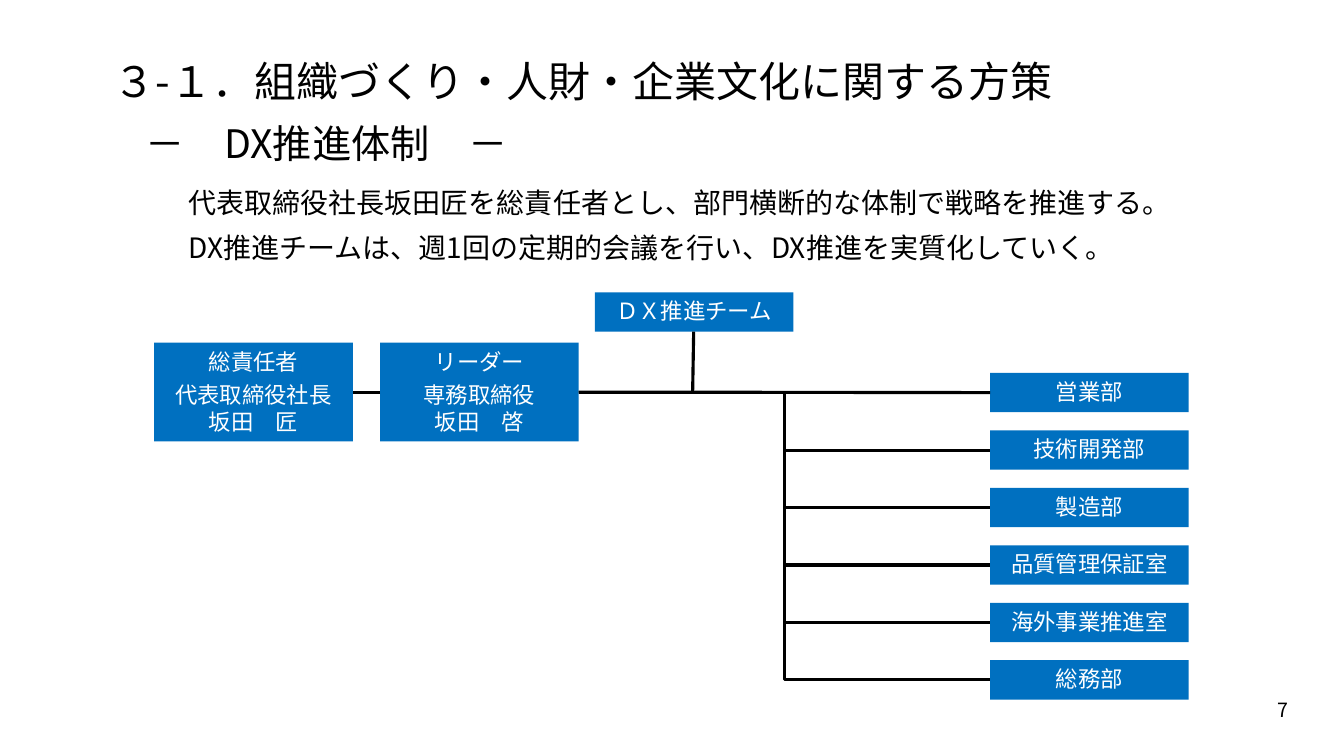
from dataclasses import dataclass

from lxml.etree import SubElement
from pptx import Presentation
from pptx.dml.color import RGBColor
from pptx.enum.shapes import MSO_CONNECTOR, MSO_SHAPE
from pptx.enum.text import MSO_ANCHOR, PP_ALIGN
from pptx.oxml.ns import qn
from pptx.util import Inches, Pt


@dataclass(frozen=True)
class Theme:
    font: str = "Noto Sans CJK JP"
    ink: RGBColor = RGBColor(0x00, 0x00, 0x00)
    box_fill: RGBColor = RGBColor(0x00, 0x70, 0xC0)
    box_text: RGBColor = RGBColor(0xFF, 0xFF, 0xFF)
    title_size: int = 30
    subtitle_size: int = 28
    body_size: int = 20
    box_size: int = 16
    number_size: int = 14
    line_width: float = 2.25


TOP, LEFT, BOTTOM, RIGHT = range(4)  # connection sites of a rectangle
BOX_WIDTH = 1.97
BOX_HEIGHT = 0.39
OFFICER_HEIGHT = 0.98
OFFICER_TOP = 3.4
DEPARTMENT_LEFT = 9.82
DEPARTMENT_TOP = 3.7
DEPARTMENT_PITCH = 0.57
DEPARTMENTS = ["営業部", "技術開発部", "製造部", "品質管理保証室", "海外事業推進室", "総務部"]


class OrganizationSlide:
    def __init__(self, presentation, theme):
        self.theme = theme
        self.slide = presentation.slides.add_slide(presentation.slide_layouts[6])

    def fill_text(self, frame, lines, size, color, spacing, align=PP_ALIGN.LEFT, gaps=()):
        """Fill a frame line by line; gaps holds the points before each line after the first."""
        frame.word_wrap = True
        for index, line in enumerate(lines):
            paragraph = frame.paragraphs[0] if index == 0 else frame.add_paragraph()
            paragraph.alignment = align
            paragraph.line_spacing = Pt(size * spacing)
            if 0 < index <= len(gaps):
                paragraph.space_before = Pt(gaps[index - 1])
            run = paragraph.add_run()
            run.text = line
            run.font.name = self.theme.font
            run.font.size = Pt(size)
            run.font.color.rgb = color
            east_asian = SubElement(run.font._element, qn("a:ea"))
            east_asian.set("typeface", self.theme.font)

    def text(self, left, top, width, height, lines, size, spacing=1.3,
             align=PP_ALIGN.LEFT, anchor=MSO_ANCHOR.TOP, gaps=()):
        shape = self.slide.shapes.add_textbox(
            Inches(left), Inches(top), Inches(width), Inches(height))
        shape.text_frame.vertical_anchor = anchor
        self.fill_text(shape.text_frame, lines, size, self.theme.ink, spacing, align, gaps)

    def box(self, left, top, lines, height=BOX_HEIGHT, gaps=()):
        shape = self.slide.shapes.add_shape(
            MSO_SHAPE.RECTANGLE, Inches(left), Inches(top), Inches(BOX_WIDTH), Inches(height))
        shape.shadow.inherit = False
        shape.fill.solid()
        shape.fill.fore_color.rgb = self.theme.box_fill
        shape.line.fill.background()
        shape.text_frame.vertical_anchor = MSO_ANCHOR.TOP
        self.fill_text(shape.text_frame, lines, self.theme.box_size, self.theme.box_text,
                       1.2, PP_ALIGN.CENTER, gaps)
        return shape

    def officer(self, left, lines):
        return self.box(left, OFFICER_TOP, lines, OFFICER_HEIGHT, gaps=[5])

    def line(self, start, end, kind=MSO_CONNECTOR.STRAIGHT):
        connector = self.slide.shapes.add_connector(
            kind, *[Inches(value) for value in (*start, *end)])
        connector.line.color.rgb = self.theme.ink
        connector.line.width = Pt(self.theme.line_width)
        SubElement(connector._element.spPr, qn("a:effectLst"))
        return connector

    def join(self, first, first_site, second, second_site, kind=MSO_CONNECTOR.STRAIGHT):
        connector = self.line((0, 0), (0, 0), kind)
        connector.begin_connect(first, first_site)
        connector.end_connect(second, second_site)


def main():
    presentation = Presentation()
    presentation.slide_width = Inches(13.33)
    presentation.slide_height = Inches(7.5)
    theme = Theme()
    page = OrganizationSlide(presentation, theme)

    page.text(1.03, 0.46, 11.27, 0.61,
              ["３-１．組織づくり・人財・企業文化に関する方策"], theme.title_size)
    page.text(1.35, 1.1, 11.27, 0.57, ["－　DX推進体制　－"], theme.subtitle_size)
    page.text(1.77, 1.82, 9.76, 0.92,
              ["代表取締役社長坂田匠を総責任者とし、部門横断的な体制で戦略を推進する。",
               "DX推進チームは、週1回の定期的会議を行い、DX推進を実質化していく。"],
              theme.body_size, spacing=1.1, gaps=[10])
    page.text(11.58, 6.83, 1.3, 0.4, ["7"], theme.number_size,
              align=PP_ALIGN.RIGHT, anchor=MSO_ANCHOR.MIDDLE)

    president = page.officer(1.53, ["総責任者", "代表取締役社長", "坂田　匠"])
    leader = page.officer(3.77, ["リーダー", "専務取締役", "坂田　啓"])
    page.join(leader, LEFT, president, RIGHT)

    page.box(5.9, 2.9, ["ＤＸ推進チーム"])
    page.line((6.87, 3.89), (6.88, 3.29))

    for index, name in enumerate(DEPARTMENTS):
        department = page.box(
            DEPARTMENT_LEFT, DEPARTMENT_TOP + index * DEPARTMENT_PITCH, [name])
        kind = MSO_CONNECTOR.STRAIGHT if index == 0 else MSO_CONNECTOR.ELBOW
        page.join(leader, RIGHT, department, LEFT, kind)

    presentation.save("out.pptx")


if __name__ == "__main__":
    main()
